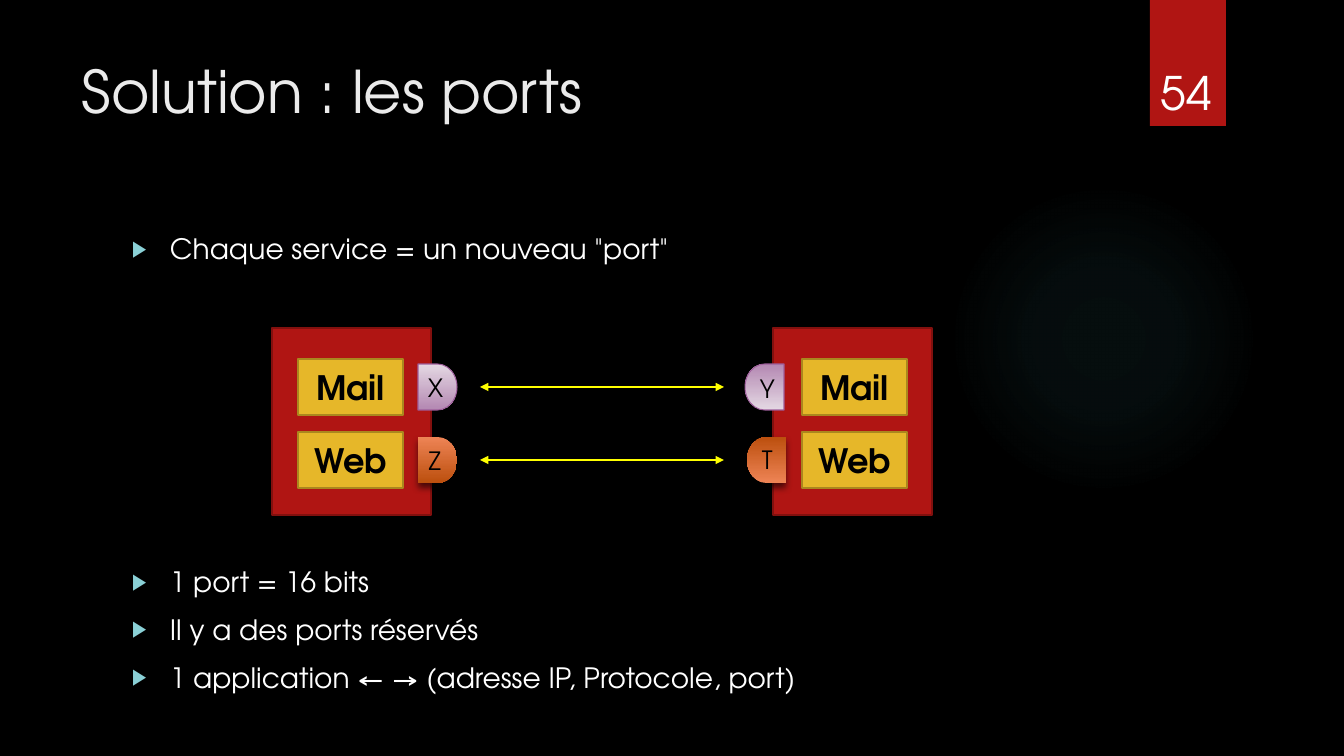
"""Build the slide explaining how ports separate the services of two hosts."""
from dataclasses import dataclass

from lxml.etree import SubElement
from pptx import Presentation
from pptx.dml.color import RGBColor
from pptx.enum.shapes import MSO_CONNECTOR, MSO_SHAPE
from pptx.enum.text import MSO_ANCHOR, PP_ALIGN
from pptx.oxml import parse_xml
from pptx.oxml.ns import nsdecls, qn
from pptx.util import Pt

TITLE = ("Solution : les ports", (72, 50, 1037, 154))
SLIDE_NUMBER = ("54", (1151, 59, 79, 67))
BULLET_GROUPS = [
    (["Chaque service = un nouveau \"port\""], (122, 227, 986, 60)),
    (
        [
            "1 port = 16 bits",
            "Il y a des ports réservés",
            "1 application ← → (adresse IP, Protocole, port)",
        ],
        (122, 560, 986, 165),
    ),
]
SERVICES = [
    {"name": "Mail", "left_port": "X", "right_port": "Y", "style": "mail", "right_x": 745},
    {"name": "Web", "left_port": "Z", "right_port": "T", "style": "web", "right_x": 747},
]

SLIDE_SIZE = (1344, 756)
HALO_BOX = (949, 184, 310, 310)
RIBBON_BOX = (1150, 0, 76, 126)
HOST_LEFTS, HOST_TOP, HOST_SIZE = (272, 773), 328, (159, 187)
SERVICE_LEFTS, SERVICE_TOP, SERVICE_SIZE = (298, 802), 359, (105, 56)
PORT_LEFT, PORT_TOP, PORT_SIZE = 418, 364, (39, 46)
ARROW_SPAN = (480, 724)
ROW_PITCH = 73
LABEL_SHIFT, LABEL_SIZE = (5, 4), (45, 40)
EMU_PER_PX = 914400 / 100.8


@dataclass(frozen=True)
class Theme:
    """Colours and type sizes of the slide."""

    font: str = "TeX Gyre Adventor"
    background: str = "000000"
    halo: str = "50B9C1"
    red: str = "B01513"
    red_line: str = "82100E"
    gold: str = "E6B729"
    gold_line: str = "AA871E"
    title: str = "EBEBEB"
    white: str = "FFFFFF"
    black: str = "000000"
    bullet: str = "8AD0D6"
    arrow: str = "FFFF00"
    mail_port: tuple = ("E4D8E3", "B488B2")
    mail_port_line: str = "9E5E9B"
    web_port: tuple = ("EE8455", "BC4F0E")
    title_size: int = 42
    number_size: int = 33
    service_size: int = 24
    body_size: int = 20
    port_size: int = 18


THEME = Theme()
PORT_STYLES = {
    "mail": {"fill": THEME.mail_port, "line": THEME.mail_port_line, "line_width": 0.75},
    "web": {"fill": THEME.web_port, "shadow": (60, 5, 3)},
}


def px(value):
    return round(value * EMU_PER_PX)


def apply_format(target, values):
    for name, value in values.items():
        setattr(target, name, value)


def write(paragraph, text, size, color, **font_format):
    paragraph.text = text
    apply_format(paragraph.font, {"name": THEME.font, "size": Pt(size), **font_format})
    paragraph.font.color.rgb = RGBColor.from_string(color)


def add_text(slide, text, box, size, color):
    frame = slide.shapes.add_textbox(*map(px, box)).text_frame
    frame.word_wrap = True
    write(frame.paragraphs[0], text, size, color)


def add_bullets(slide, items, box):
    frame = slide.shapes.add_textbox(*map(px, box)).text_frame
    frame.word_wrap = True
    for index, item in enumerate(items):
        paragraph = frame.add_paragraph() if index else frame.paragraphs[0]
        paragraph.space_before = Pt(10 if index else 0)
        properties = paragraph._p.get_or_add_pPr()
        properties.set("marL", str(px(38)))
        properties.set("indent", str(-px(38)))
        color = SubElement(properties, qn("a:buClr"))
        SubElement(color, qn("a:srgbClr"), val=THEME.bullet)
        SubElement(properties, qn("a:buSzPct"), val="80000")
        SubElement(properties, qn("a:buFont"), typeface="Arial")
        SubElement(properties, qn("a:buChar"), char="▶")
        write(paragraph, item, THEME.body_size, THEME.white)


def add_shadow(shape, opacity, blur, distance):
    effects = shape._element.spPr.find(qn("a:effectLst"))
    shadow = SubElement(
        effects, qn("a:outerShdw"), blurRad=str(Pt(blur)), dist=str(Pt(distance)),
        dir="5400000", rotWithShape="0",
    )
    color = SubElement(shadow, qn("a:srgbClr"), val=THEME.black)
    SubElement(color, qn("a:alpha"), val=str(opacity * 1000))


def add_block(slide, kind, box, fill, line=None, line_width=1.5, shadow=None):
    shape = slide.shapes.add_shape(kind, *map(px, box))
    shape.shadow.inherit = False
    if isinstance(fill, tuple):
        shape.fill.gradient()
        shape.fill.gradient_angle = 270
        for stop, position, color in zip(shape.fill.gradient_stops, (0, 1), fill):
            stop.position = position
            stop.color.rgb = RGBColor.from_string(color)
    else:
        shape.fill.solid()
        shape.fill.fore_color.rgb = RGBColor.from_string(fill)
    if line:
        shape.line.color.rgb = RGBColor.from_string(line)
        shape.line.width = Pt(line_width)
    else:
        shape.line.fill.background()
    if shadow:
        add_shadow(shape, *shadow)
    return shape


def label_block(shape, text, size, **font_format):
    shape.text_frame.vertical_anchor = MSO_ANCHOR.MIDDLE
    paragraph = shape.text_frame.paragraphs[0]
    paragraph.alignment = PP_ALIGN.CENTER
    write(paragraph, text, size, THEME.black, **font_format)


def add_halo(slide):
    halo = add_block(slide, MSO_SHAPE.OVAL, HALO_BOX, THEME.halo)
    stops = "".join(
        f'<a:gs pos="{position}000"><a:srgbClr val="{THEME.halo}">'
        f'<a:alpha val="{opacity}000"/></a:srgbClr></a:gs>'
        for position, opacity in ((0, 7), (36, 6), (69, 0))
    )
    gradient = parse_xml(
        f'<a:gradFill {nsdecls("a")}><a:gsLst>{stops}</a:gsLst><a:path path="circle">'
        '<a:fillToRect l="50000" t="50000" r="50000" b="50000"/></a:path></a:gradFill>'
    )
    properties = halo._element.spPr
    properties.replace(properties.find(qn("a:solidFill")), gradient)


def add_arrow(slide, y):
    start, end = ARROW_SPAN
    arrow = slide.shapes.add_connector(MSO_CONNECTOR.STRAIGHT, px(start), px(y), px(end), px(y))
    arrow.line.color.rgb = RGBColor.from_string(THEME.arrow)
    arrow.line.width = Pt(1.5)
    for end_tag in ("a:headEnd", "a:tailEnd"):
        SubElement(arrow.line._get_or_add_ln(), qn(end_tag), type="triangle")
    SubElement(arrow._element.spPr, qn("a:effectLst"))


def add_service_row(slide, row, service):
    shift = row * ROW_PITCH
    for left in SERVICE_LEFTS:
        box = (left, SERVICE_TOP + shift, *SERVICE_SIZE)
        block = add_block(slide, MSO_SHAPE.RECTANGLE, box, THEME.gold, THEME.gold_line)
        label_block(block, service["name"], THEME.service_size, bold=True)
    top = PORT_TOP + shift
    add_arrow(slide, top + PORT_SIZE[1] / 2)
    left_port, right_port = (
        add_block(slide, MSO_SHAPE.FLOWCHART_DELAY, (left, top, *PORT_SIZE),
                  **PORT_STYLES[service["style"]])
        for left in (PORT_LEFT, service["right_x"])
    )
    label_block(left_port, service["left_port"], THEME.port_size)
    right_port.rotation = 180
    label_box = (service["right_x"] + LABEL_SHIFT[0], top + LABEL_SHIFT[1] - 2 * row, *LABEL_SIZE)
    add_text(slide, service["right_port"], label_box, THEME.port_size, THEME.black)


def main():
    presentation = Presentation()
    apply_format(presentation, dict(zip(("slide_width", "slide_height"), map(px, SLIDE_SIZE))))
    slide = presentation.slides.add_slide(presentation.slide_layouts[6])
    slide.background.fill.solid()
    slide.background.fill.fore_color.rgb = RGBColor.from_string(THEME.background)
    add_halo(slide)
    add_block(slide, MSO_SHAPE.RECTANGLE, RIBBON_BOX, THEME.red, shadow=(45, 3, 2))
    add_text(slide, *TITLE, THEME.title_size, THEME.title)
    for items, box in BULLET_GROUPS:
        add_bullets(slide, items, box)
    for left in HOST_LEFTS:
        box = (left, HOST_TOP, *HOST_SIZE)
        add_block(slide, MSO_SHAPE.RECTANGLE, box, THEME.red, THEME.red_line)
    for row, service in enumerate(SERVICES):
        add_service_row(slide, row, service)
    add_text(slide, *SLIDE_NUMBER, THEME.number_size, THEME.white)
    presentation.save("out.pptx")


if __name__ == "__main__":
    main()
